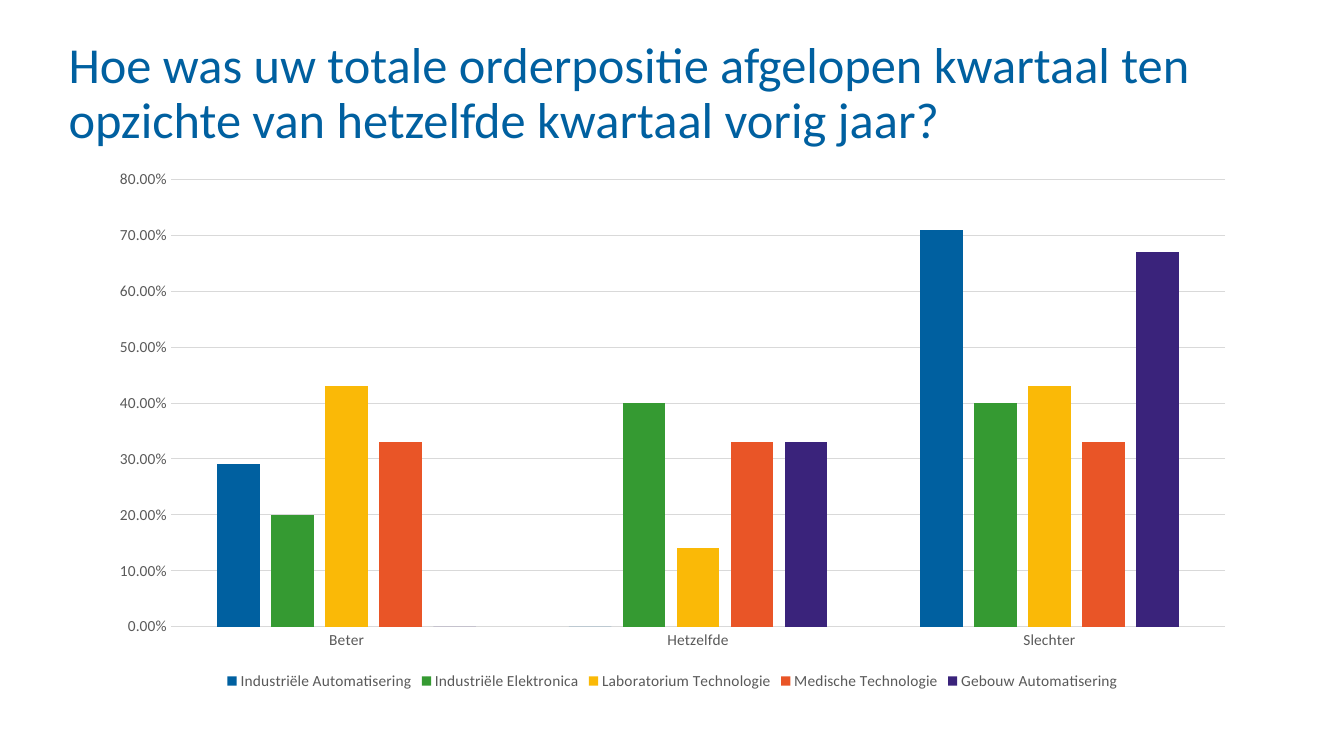
from dataclasses import dataclass
from pptx import Presentation
from pptx.chart.data import CategoryChartData as Data
from pptx.dml.color import RGBColor as Rgb
from pptx.enum.chart import XL_CHART_TYPE as Kind, XL_LEGEND_POSITION as Spot, XL_TICK_MARK as Tick
from pptx.enum.text import MSO_ANCHOR as Anchor
from pptx.util import Inches, Pt


@dataclass
class Theme:
    face: str = "Calibri"
    blue: str = "0060A0"
    green: str = "359A32"
    gold: str = "FAB907"
    red: str = "E95527"
    plum: str = "3A237B"
    gray: str = "595959"
    rule: str = "D9D9D9"
    head: int = 36
    label: int = 11


def style(font, size, color):
    font.name = theme.face
    font.size = Pt(size)
    font.color.rgb = Rgb.from_string(color)


def draw(line):
    line.color.rgb = Rgb.from_string(theme.rule)
    line.width = Pt(0.75)


theme = Theme()
deck = Presentation()
deck.slide_width = Inches(13.33)
deck.slide_height = Inches(7.5)
slide = deck.slides.add_slide(deck.slide_layouts[6])

box = slide.shapes.add_textbox(Inches(0.68), Inches(0.4), Inches(11.94), Inches(0.76))
frame = box.text_frame
frame.word_wrap = True
frame.vertical_anchor = Anchor.TOP
frame.margin_left = frame.margin_right = frame.margin_top = frame.margin_bottom = 0
para = frame.paragraphs[0]
para.line_spacing = 0.9
run = para.add_run()
run.text = "Hoe was uw totale orderpositie afgelopen kwartaal ten opzichte van hetzelfde kwartaal vorig jaar?"
style(run.font, theme.head, theme.blue)

groups = [
    ("Industriële Automatisering", (0.29, 0, 0.71), theme.blue),
    ("Industriële Elektronica", (0.2, 0.4, 0.4), theme.green),
    ("Laboratorium Technologie", (0.43, 0.14, 0.43), theme.gold),
    ("Medische Technologie", (0.33, 0.33, 0.33), theme.red),
    ("Gebouw Automatisering", (0, 0.33, 0.67), theme.plum),
]
data = Data(number_format="0.00%")
data.categories = ["Beter", "Hetzelfde", "Slechter"]
for name, shares, color in groups:
    data.add_series(name, shares)

chart = slide.shapes.add_chart(
    Kind.COLUMN_CLUSTERED, Inches(0.96), Inches(1.58), Inches(11.42), Inches(5.31), data
).chart
style(chart.font, theme.label, theme.gray)
chart.has_title = False
chart.has_legend = True
chart.legend.position = Spot.BOTTOM
chart.legend.include_in_layout = False
style(chart.legend.font, theme.label, theme.gray)

plot = chart.plots[0]
plot.gap_width = 219
plot.overlap = -27
plot.vary_by_categories = False
for bars, (name, shares, color) in zip(plot.series, groups):
    bars.invert_if_negative = False
    bars.format.fill.solid()
    bars.format.fill.fore_color.rgb = Rgb.from_string(color)

for axis in (chart.category_axis, chart.value_axis):
    axis.major_tick_mark = axis.minor_tick_mark = Tick.NONE
    style(axis.tick_labels.font, theme.label, theme.gray)
draw(chart.category_axis.format.line)

scale = chart.value_axis
scale.minimum_scale = 0
scale.maximum_scale = 0.8
scale.major_unit = 0.1
scale.tick_labels.number_format = "0.00%"
scale.tick_labels.number_format_is_linked = False
scale.format.line.fill.background()
scale.has_major_gridlines = True
draw(scale.major_gridlines.format.line)

deck.save("out.pptx")
